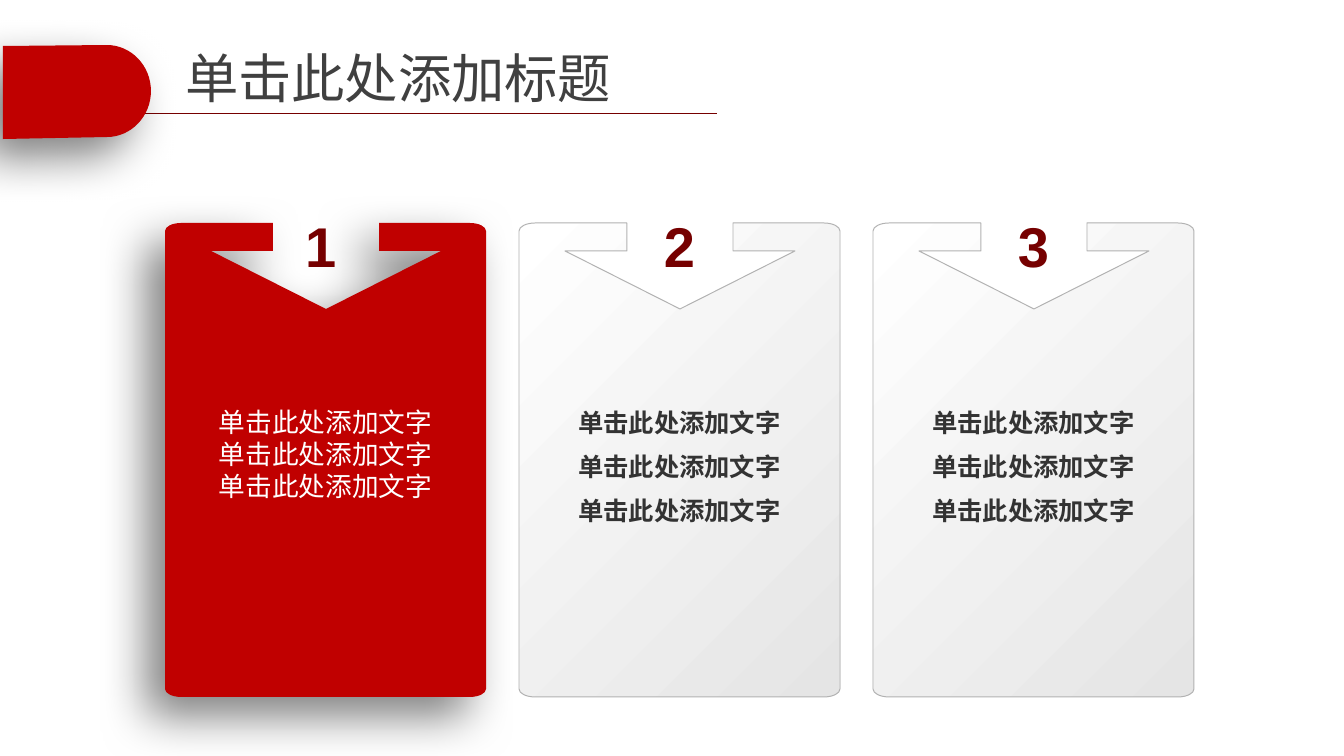
"""Build a title slide section with three numbered, notched cards."""
from dataclasses import dataclass

import pptx
import pptx.dml.color
import pptx.enum.shapes
import pptx.enum.text
import pptx.oxml
import pptx.oxml.ns
import pptx.util

PX = 9525
KAPPA = 0.55
RED, DARK_RED = "C00000", "760000"
CJK = "Noto Sans CJK SC"
CARD_LEFT, CARD_TOP, CARD_W, CARD_H, CARD_PITCH = 165, 223, 321, 474, 354
CORNER_X, CORNER_Y = 16, 8
NOTCH = [(108, 0), (108, 28), (46, 28), (161, 86), (276, 28), (214, 28), (214, 0)]
LINES = ["单击此处添加文字"] * 3
ALIGN = pptx.enum.text.PP_ALIGN
ANCHOR = pptx.enum.text.MSO_ANCHOR
NS = pptx.oxml.ns.nsdecls("a")


@dataclass
class Style:
    size: int
    color: str
    font: str = CJK
    bold: bool = False
    align: ALIGN = ALIGN.CENTER
    line_pt: int = 0
    before_pt: int = 0


@dataclass
class Turn:
    """A quarter ellipse from start to end, bulging towards corner."""
    start: tuple
    corner: tuple
    end: tuple

    def points(self) -> list:
        controls = [tuple(a + KAPPA * (c - a) for a, c in zip(p, self.corner))
                    for p in (self.start, self.end)]
        return [self.start, *controls, self.end]


@dataclass
class Card:
    number: str
    number_w: int
    text_top: int
    text_h: int
    style: Style
    active: bool = False


def px(n: float) -> int:
    return round(n * PX)


def rgb(color: str) -> pptx.dml.color.RGBColor:
    return pptx.dml.color.RGBColor.from_string(color)


def add_outline(s, parts: list, left: int = 0, top: int = 0):
    points, curves = [], []
    for part in parts:
        if isinstance(part, Turn):
            new = part.points()
            if points and points[-1] == part.start:
                new = new[1:]
            points += new
            curves.append(len(points) - 4)
        else:
            points.append(part)
    emu = [(px(left + x), px(top + y)) for x, y in points]
    builder = s.shapes.build_freeform(*emu[0])
    builder.add_line_segments(emu[1:], close=True)
    sp = builder.convert_to_shape()
    segments = list(sp._element.iter(pptx.oxml.ns.qn("a:lnTo")))
    for first in curves:
        curve = pptx.oxml.parse_xml(f"<a:cubicBezTo {NS}/>")
        segments[first].addprevious(curve)
        for segment in segments[first:first + 3]:
            curve.append(segment[0])
            segment.getparent().remove(segment)
    sp.shadow.inherit = False
    return sp


def fill_red(sp) -> None:
    sp.fill.solid()
    sp.fill.fore_color.rgb = rgb(RED)
    sp.line.fill.background()
    effects = sp._element.spPr.find(pptx.oxml.ns.qn("a:effectLst"))
    effects.append(pptx.oxml.parse_xml(
        f'<a:outerShdw {NS} blurRad="{pptx.util.Pt(35)}" '
        f'dist="{pptx.util.Pt(20)}" dir="8100000" algn="ctr" rotWithShape="0">'
        '<a:srgbClr val="000000"><a:alpha val="50000"/></a:srgbClr></a:outerShdw>'))


def fill_grey(sp) -> None:
    sp.fill.gradient()
    sp.fill.gradient_angle = 315
    for stop, color in zip(sp.fill.gradient_stops, ("FFFFFF", "E5E5E5")):
        stop.color.rgb = rgb(color)
    sp.line.color.rgb = rgb("B2B2B2")
    sp.line.width = pptx.util.Pt(0.75)


def add_text(s, box: tuple, lines: list, style: Style, anchor=ANCHOR.MIDDLE,
             wrap: bool = True, inset_x: int = 12) -> None:
    tf = s.shapes.add_textbox(*map(px, box)).text_frame
    tf.word_wrap = wrap
    tf.vertical_anchor = anchor
    tf.margin_left = tf.margin_right = px(inset_x)
    tf.margin_top = tf.margin_bottom = px(6)
    tf.text = "\n".join(lines)
    for i, p in enumerate(tf.paragraphs):
        p.alignment = style.align
        if style.line_pt:
            p.line_spacing = pptx.util.Pt(style.line_pt)
        if i and style.before_pt:
            p.space_before = pptx.util.Pt(style.before_pt)
        for r in p.runs:
            r.font.size = pptx.util.Pt(style.size)
            r.font.bold = style.bold
            r.font.color.rgb = rgb(style.color)
            r.font.name = style.font
            r.font._element.find(pptx.oxml.ns.qn("a:latin")).addnext(
                pptx.oxml.parse_xml(f'<a:ea {NS} typeface="{CJK}"/>'))


def add_header(s) -> None:
    line = s.shapes.add_connector(pptx.enum.shapes.MSO_CONNECTOR.STRAIGHT,
                                  px(88), px(114), px(717), px(114))
    line.line.color.rgb = rgb(DARK_RED)
    line.line.width = pptx.util.Pt(0.75)
    line._element.spPr.append(pptx.oxml.parse_xml(f"<a:effectLst {NS}/>"))
    fill_red(add_outline(s, [(3, 46), Turn((107, 45), (151, 45), (151, 91)),
                             Turn((151, 91), (151, 137), (107, 137)), (3, 139)]))
    add_text(s, (173, 30, 909, 95), ["单击此处添加标题"],
             Style(40, "404040", "Arial", align=ALIGN.LEFT))


def add_card(s, left: int, card: Card) -> None:
    w, h, rx, ry = CARD_W, CARD_H, CORNER_X, CORNER_Y
    sp = add_outline(s, [
        Turn((0, ry), (0, 0), (rx, 0)), *NOTCH,
        Turn((w - rx, 0), (w, 0), (w, ry)),
        Turn((w, h - ry), (w, h), (w - rx, h)),
        Turn((rx, h), (0, h), (0, h - ry)),
    ], left, CARD_TOP)
    if card.active:
        fill_red(sp)
    else:
        fill_grey(sp)
    add_text(s, (left + 140, 205, card.number_w, 58), [card.number],
             Style(42, DARK_RED, "Arial", True), ANCHOR.TOP, False, 0)
    add_text(s, (left + 24, card.text_top, 273, card.text_h), LINES, card.style)


def main() -> None:
    prs = pptx.Presentation()
    prs.slide_width, prs.slide_height = px(1344), px(756)
    s = prs.slides.add_slide(prs.slide_layouts[6])
    add_header(s)
    plain = Style(19, "333333", bold=True, line_pt=23, before_pt=10)
    cards = [
        Card("1", 29, 355, 197, Style(20, "FFFFFF", line_pt=24), active=True),
        Card("2", 41, 399, 135, plain),
        Card("3", 41, 399, 135, plain),
    ]
    for i, card in enumerate(cards):
        add_card(s, CARD_LEFT + i * CARD_PITCH, card)
    prs.save("out.pptx")


if __name__ == "__main__":
    main()
